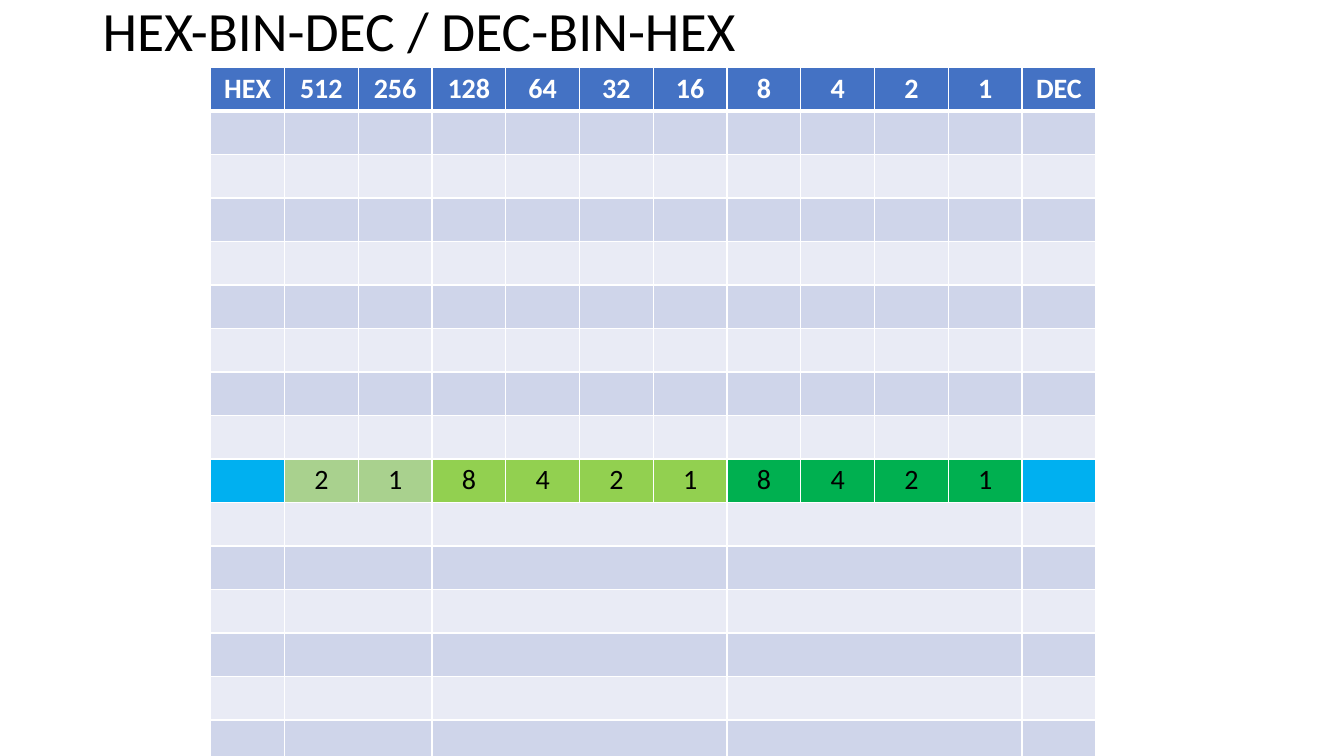
from lxml.etree import SubElement
from pptx import Presentation
from pptx.dml.color import RGBColor
from pptx.enum.text import MSO_ANCHOR, PP_ALIGN
from pptx.oxml.ns import qn
from pptx.util import Inches, Pt

HEADINGS = ["HEX", "512", "256", "128", "64", "32", "16", "8", "4", "2", "1", "DEC"]
DIGIT_GROUPS = [
    (1, ["2", "1"], "A9D18E"),
    (3, ["8", "4", "2", "1"], "92D050"),
    (7, ["8", "4", "2", "1"], "00B050"),
]
ROW_COUNT = 16
DIGIT_ROW = 9


def color(value):
    return RGBColor.from_string(value)


def write_text(frame, text, size=20, fill="000000", bold=False, align=PP_ALIGN.CENTER, spacing=1.0):
    paragraph = frame.paragraphs[0]
    paragraph.alignment = align
    paragraph.line_spacing = spacing
    run = paragraph.add_run()
    run.text = text
    run.font.name = "Calibri"
    run.font.size = Pt(size)
    run.font.bold = bold
    run.font.color.rgb = color(fill)


class ConversionSlide:
    """Holds the style and the slide of the number conversion sheet."""

    header = "4472C4"
    bands = ("E9EBF5", "CFD5EA")
    accent = "00B0F0"
    border = "FFFFFF"

    def __init__(self, presentation):
        self.slide = presentation.slides.add_slide(presentation.slide_layouts[6])

    def add_title(self, text):
        shape = self.slide.shapes.add_textbox(Inches(0.92), 0, Inches(11.5), Inches(0.67))
        frame = shape.text_frame
        frame.word_wrap = True
        frame.vertical_anchor = MSO_ANCHOR.MIDDLE
        write_text(frame, text, size=39.6, align=PP_ALIGN.LEFT, spacing=0.9)

    def style_cell(self, cell, fill, top=1, bottom=1):
        cell.margin_top = cell.margin_bottom = Inches(0.04)
        cell.fill.solid()
        cell.fill.fore_color.rgb = color(fill)
        properties = cell._tc.get_or_add_tcPr()
        widths = {"lnL": 1, "lnR": 1, "lnT": top, "lnB": bottom}
        for position, (side, width) in enumerate(widths.items()):
            line = SubElement(properties, qn(f"a:{side}"), w=str(Pt(width)))
            solid = SubElement(line, qn("a:solidFill"))
            SubElement(solid, qn("a:srgbClr"), val=self.border)
            properties.insert(position, line)

    def add_table(self):
        width, height = Inches(8.78), Inches(6.91)
        table = self.slide.shapes.add_table(
            ROW_COUNT, len(HEADINGS), Inches(2.09), Inches(0.67), width, height
        ).table
        for column in table.columns:
            column.width = width // len(HEADINGS)
        for row in table.rows:
            row.height = height // ROW_COUNT

        digits = {
            first + offset: (text, fill)
            for first, texts, fill in DIGIT_GROUPS
            for offset, text in enumerate(texts)
        }
        for row in range(ROW_COUNT):
            for column, heading in enumerate(HEADINGS):
                cell = table.cell(row, column)
                if row == 0:
                    self.style_cell(cell, self.header, bottom=3)
                    write_text(cell.text_frame, heading, fill="FFFFFF", bold=True)
                elif row == DIGIT_ROW:
                    text, fill = digits.get(column, ("", self.accent))
                    self.style_cell(cell, fill)
                    if text:
                        write_text(cell.text_frame, text)
                else:
                    self.style_cell(cell, self.bands[row % 2], top=3 if row == 1 else 1)

        for row in range(DIGIT_ROW + 1, ROW_COUNT):
            for first, texts, _ in DIGIT_GROUPS:
                table.cell(row, first).merge(table.cell(row, first + len(texts) - 1))


def main():
    presentation = Presentation()
    presentation.slide_width = Inches(13.33)
    presentation.slide_height = Inches(7.5)
    sheet = ConversionSlide(presentation)
    sheet.add_title("HEX-BIN-DEC / DEC-BIN-HEX")
    sheet.add_table()
    presentation.save("out.pptx")


if __name__ == "__main__":
    main()
